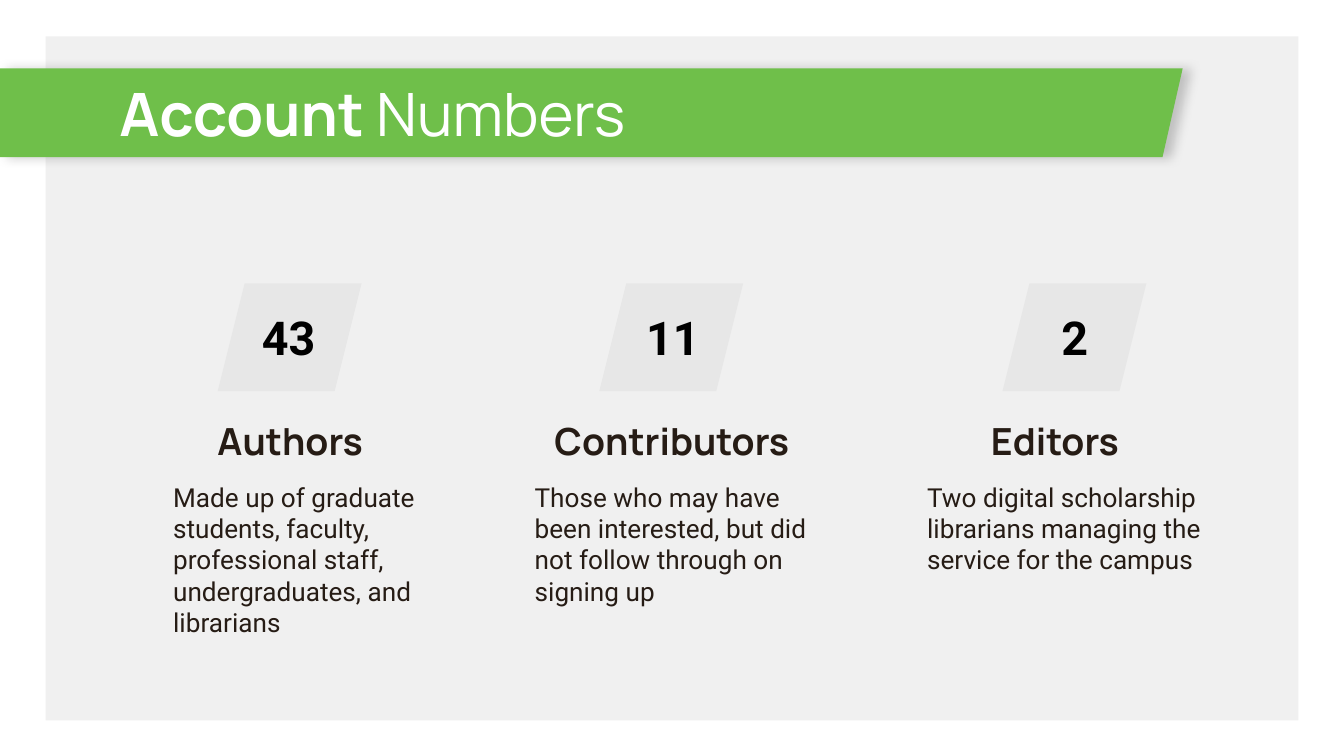
"""Build the account numbers slide: a title banner over three counted groups."""
from dataclasses import dataclass

import lxml.etree
import pptx
import pptx.dml.color
import pptx.enum.shapes
import pptx.enum.text
import pptx.oxml
import pptx.oxml.ns
import pptx.util


@dataclass(frozen=True)
class Theme:
    panel: str = "F0F0F0"
    banner: str = "6FBF4A"
    badge: str = "E7E7E7"
    light: str = "FFFFFF"
    dark: str = "261C15"
    black: str = "000000"
    heading_font: str = "Manrope"
    body_font: str = "Roboto"
    title_size: int = 32
    number_size: int = 25
    heading_size: int = 20
    body_size: int = 14


theme = Theme()
align = pptx.enum.text.PP_ALIGN
anchor = pptx.enum.text.MSO_ANCHOR
presets = pptx.enum.shapes.MSO_SHAPE

presentation = pptx.Presentation()
presentation.slide_width = pptx.util.Inches(10)
presentation.slide_height = presentation.slide_width * 9 // 16
slide = presentation.slides.add_slide(presentation.slide_layouts[6])
column = presentation.slide_width / 100
row = presentation.slide_height / 56.25


def grid(left, top, width, height):
    return [round(left * column), round(top * row), round(width * column), round(height * row)]


def add_text(box, runs, font_name, size, color, bold=False, alignment=align.LEFT, vertical=anchor.TOP):
    frame = slide.shapes.add_textbox(*grid(*box)).text_frame
    frame.word_wrap = True
    frame.vertical_anchor = vertical
    frame.margin_left = frame.margin_right = frame.margin_top = frame.margin_bottom = round(column)
    paragraph = frame.paragraphs[0]
    paragraph.alignment = alignment
    for text in runs:
        paragraph.add_run().text = text
    paragraph.font.name = font_name
    paragraph.font.size = pptx.util.Pt(size)
    paragraph.font.bold = bold
    paragraph.font.color.rgb = pptx.dml.color.RGBColor.from_string(color)
    return paragraph


panel = slide.shapes.add_shape(presets.RECTANGLE, *grid(3.4, 2.7, 93.2, 50.9))
builder = slide.shapes.build_freeform(0, round(5.1 * row))
builder.add_line_segments(
    [(round(x * column), round(y * row)) for x, y in [(0, 11.7), (86.5, 11.7), (88, 5.1)]]
)
banner = builder.convert_to_shape()
filled = [(panel, theme.panel), (banner, theme.banner)]

title = add_text((7.9, 5.9, 84.3, 5), ["Account ", "Numbers"], theme.heading_font,
                 theme.title_size, theme.light, vertical=anchor.MIDDLE)
title.runs[0].font.bold = True

groups = [
    ("43", "Authors", "Made up of graduate students, faculty, professional staff, undergraduates, and librarians",
     16.2, 18.5, 7.9, 11.9, 8),
    ("11", "Contributors", "Those who may have been interested, but did not follow through on signing up",
     44.6, 47.1, 36.3, 38.8, 8),
    ("2", "Editors", "Two digital scholarship librarians managing the service for the campus",
     74.6, 78, 64.8, 68, 6.4),
]
for number, heading, description, badge_left, number_left, heading_left, body_left, body_height in groups:
    badge = slide.shapes.add_shape(presets.PARALLELOGRAM, *grid(badge_left, 21.1, 10.7, 8))
    badge.adjustments[0] = 0.25
    filled.append((badge, theme.badge))
    add_text((number_left, 22, 7.4, 6.2), [number], theme.body_font, theme.number_size, theme.black, bold=True)
    add_text((heading_left, 30.8, 27.4, 4), [heading], theme.heading_font, theme.heading_size,
             theme.dark, bold=True, alignment=align.CENTER, vertical=anchor.MIDDLE)
    add_text((body_left, 34.8, 24, body_height), [description], theme.body_font, theme.body_size, theme.dark)

for shape, color in filled:
    shape.shadow.inherit = False
    shape.fill.solid()
    shape.fill.fore_color.rgb = pptx.dml.color.RGBColor.from_string(color)
    shape.line.fill.background()

effects = banner._element.spPr.find(pptx.oxml.ns.qn("a:effectLst"))
shadow = lxml.etree.SubElement(
    effects, pptx.oxml.ns.qn("a:outerShdw"), dir="0", algn="l", rotWithShape="0",
    blurRad=str(pptx.util.Pt(5.6)), dist=str(pptx.util.Pt(3.8)),
)
shade = lxml.etree.SubElement(shadow, pptx.oxml.ns.qn("a:srgbClr"), val=theme.black)
lxml.etree.SubElement(shade, pptx.oxml.ns.qn("a:alpha"), val="20000")

presentation.save("out.pptx")
